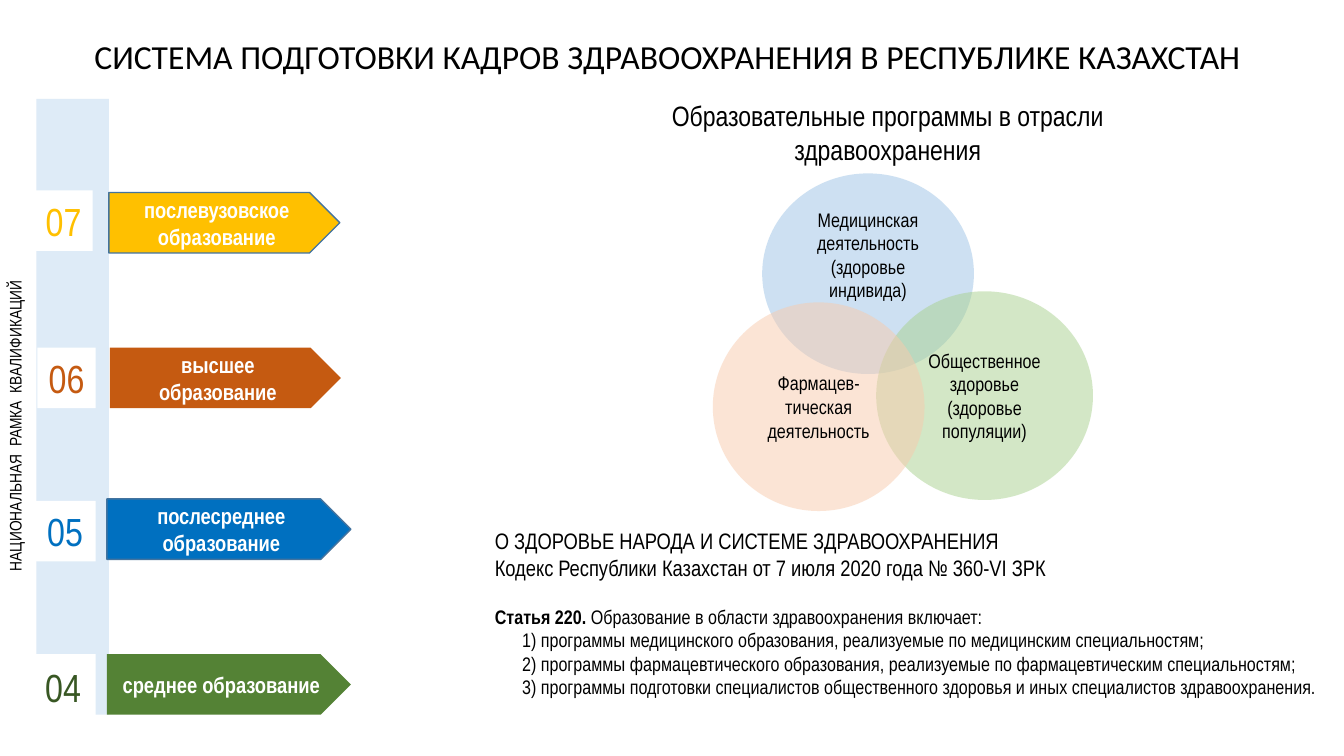
import pptx
import pptx.dml.color
import pptx.enum.shapes
import pptx.enum.text
import pptx.oxml.ns
import pptx.util
from lxml import etree

Inches, Pt = pptx.util.Inches, pptx.util.Pt
SHAPE = pptx.enum.shapes.MSO_SHAPE
TOP, MIDDLE = pptx.enum.text.MSO_ANCHOR.TOP, pptx.enum.text.MSO_ANCHOR.MIDDLE
LEFT, CENTER = pptx.enum.text.PP_ALIGN.LEFT, pptx.enum.text.PP_ALIGN.CENTER
NARROW = "Arial Narrow"

TITLE = "СИСТЕМА ПОДГОТОВКИ КАДРОВ ЗДРАВООХРАНЕНИЯ В РЕСПУБЛИКЕ КАЗАХСТАН"
FRAMEWORK = "НАЦИОНАЛЬНАЯ  РАМКА  КВАЛИФИКАЦИЙ"
PROGRAMMES = "Образовательные программы в отрасли здравоохранения"

# number, label, arrow colour, number colour, outline, arrow box, number box
LEVELS = [
    ("04", "среднее образование", "548235", "385723", None,
     (1.06, 6.49, 2.42, 0.6), (0.3, 6.49, 0.65, 0.64)),
    ("05", "послесреднее образование", "0070C0", "0070C0", "43739E",
     (1.06, 4.95, 2.42, 0.6), (0.34, 4.97, 0.61, 0.6)),
    ("06", "высшее образование", "C55A11", "C55A11", None,
     (1.09, 3.45, 2.29, 0.6), (0.37, 3.45, 0.58, 0.6)),
    ("07", "послевузовское образование", "FFC000", "FFC000", "43739E",
     (1.08, 1.91, 2.29, 0.6), (0.34, 1.89, 0.58, 0.6)),
]

# label, colour, box, anchor
FIELDS = [
    ("Медицинская деятельность (здоровье индивида)", "9DC3E6",
     (7.56, 1.72, 2.1, 1.99), TOP),
    ("Общественное здоровье (здоровье популяции)", "A9D18E",
     (8.69, 2.89, 2.15, 2.07), MIDDLE),
    ("Фармацев-тическая деятельность", "F8CBAD",
     (7.07, 3, 2.1, 2.07), MIDDLE),
]

# runs as (text, bold), size, space before in points, indent in inches
LAW = [
    ([("О ЗДОРОВЬЕ НАРОДА И СИСТЕМЕ ЗДРАВООХРАНЕНИЯ", False)], 16, 0, 0),
    ([("Кодекс Республики Казахстан от 7 июля 2020 года № 360-VI ЗРК", False)], 16, 0, 0),
    ([("Статья 220. ", True),
      ("Образование в области здравоохранения включает:", False)], 14, 17, 0),
    ([("1) программы медицинского образования, реализуемые по медицинским "
       "специальностям;", False)], 14, 0, 0.27),
    ([("2) программы фармацевтического образования, реализуемые по "
       "фармацевтическим специальностям;", False)], 14, 0, 0.27),
    ([("3) программы подготовки специалистов общественного здоровья и иных "
       "специалистов здравоохранения.", False)], 14, 0, 0.27),
]


def rgb(color):
    return pptx.dml.color.RGBColor.from_string(color)


def add_run(paragraph, text, size, color="000000", bold=False, font=NARROW):
    run = paragraph.add_run()
    run.text = text
    run.font.size = Pt(size)
    run.font.name = font
    run.font.bold = bold
    run.font.color.rgb = rgb(color)


def write(shape, text, size, anchor=MIDDLE, **style):
    """Put one centred paragraph into a shape and return the paragraph."""
    frame = shape.text_frame
    frame.word_wrap = True
    frame.vertical_anchor = anchor
    paragraph = frame.paragraphs[0]
    paragraph.alignment = CENTER
    add_run(paragraph, text, size, **style)
    return paragraph


def add_shape(slide, kind, box, fill, outline=None, alpha=None):
    """Add a flat filled shape; alpha is its opacity in percent."""
    shape = slide.shapes.add_shape(kind, *map(Inches, box))
    shape.shadow.inherit = False
    shape.fill.solid()
    shape.fill.fore_color.rgb = rgb(fill)
    if outline:
        shape.line.color.rgb = rgb(outline)
        shape.line.width = Pt(1)
    else:
        shape.line.fill.background()
    if alpha:
        color = shape.fill._xPr.find(".//" + pptx.oxml.ns.qn("a:srgbClr"))
        etree.SubElement(color, pptx.oxml.ns.qn("a:alpha"), val=str(alpha * 1000))
    return shape


def add_textbox(slide, box):
    return slide.shapes.add_textbox(*map(Inches, box))


def add_levels(slide):
    add_shape(slide, SHAPE.RECTANGLE, (0.36, 0.98, 0.72, 6.11), "DEEBF7")
    for number, label, fill, number_color, outline, arrow_box, number_box in LEVELS:
        arrow = add_shape(slide, SHAPE.PENTAGON, arrow_box, fill, outline)
        write(arrow, label, 16, color="FFFFFF", bold=True)
        badge = add_shape(slide, SHAPE.RECTANGLE, number_box, "FFFFFF")
        write(badge, number, 28, color=number_color)
    framework = add_textbox(slide, (0, 1.36, 0.4, 5.73))
    write(framework, FRAMEWORK, 12, TOP)
    framework.text_frame._txBody.bodyPr.set("vert", "vert270")


def add_fields(slide):
    write(add_textbox(slide, (5.94, 0.93, 5.73, 0.88)), PROGRAMMES, 20, TOP)
    for label, fill, box, anchor in FIELDS:
        circle = add_shape(slide, SHAPE.OVAL, box, fill, alpha=50)
        write(circle, label, 14, anchor)


def add_law(slide):
    frame = add_textbox(slide, (4.81, 5.18, 8.47, 1.82)).text_frame
    frame.word_wrap = True
    for index, (runs, size, space, indent) in enumerate(LAW):
        paragraph = frame.add_paragraph() if index else frame.paragraphs[0]
        paragraph.alignment = LEFT
        paragraph.space_before = Pt(space)
        paragraph._p.get_or_add_pPr().set("marL", str(Inches(indent)))
        for text, bold in runs:
            add_run(paragraph, text, size, bold=bold)


def main():
    presentation = pptx.Presentation()
    presentation.slide_width = Inches(13.33)
    presentation.slide_height = Inches(7.5)
    slide = presentation.slides.add_slide(presentation.slide_layouts[6])
    title = add_textbox(slide, (0, 0.02, 13.24, 1.13))
    write(title, TITLE, 24, font="Calibri").line_spacing = 0.9
    add_levels(slide)
    add_fields(slide)
    add_law(slide)
    presentation.save("out.pptx")


if __name__ == "__main__":
    main()
